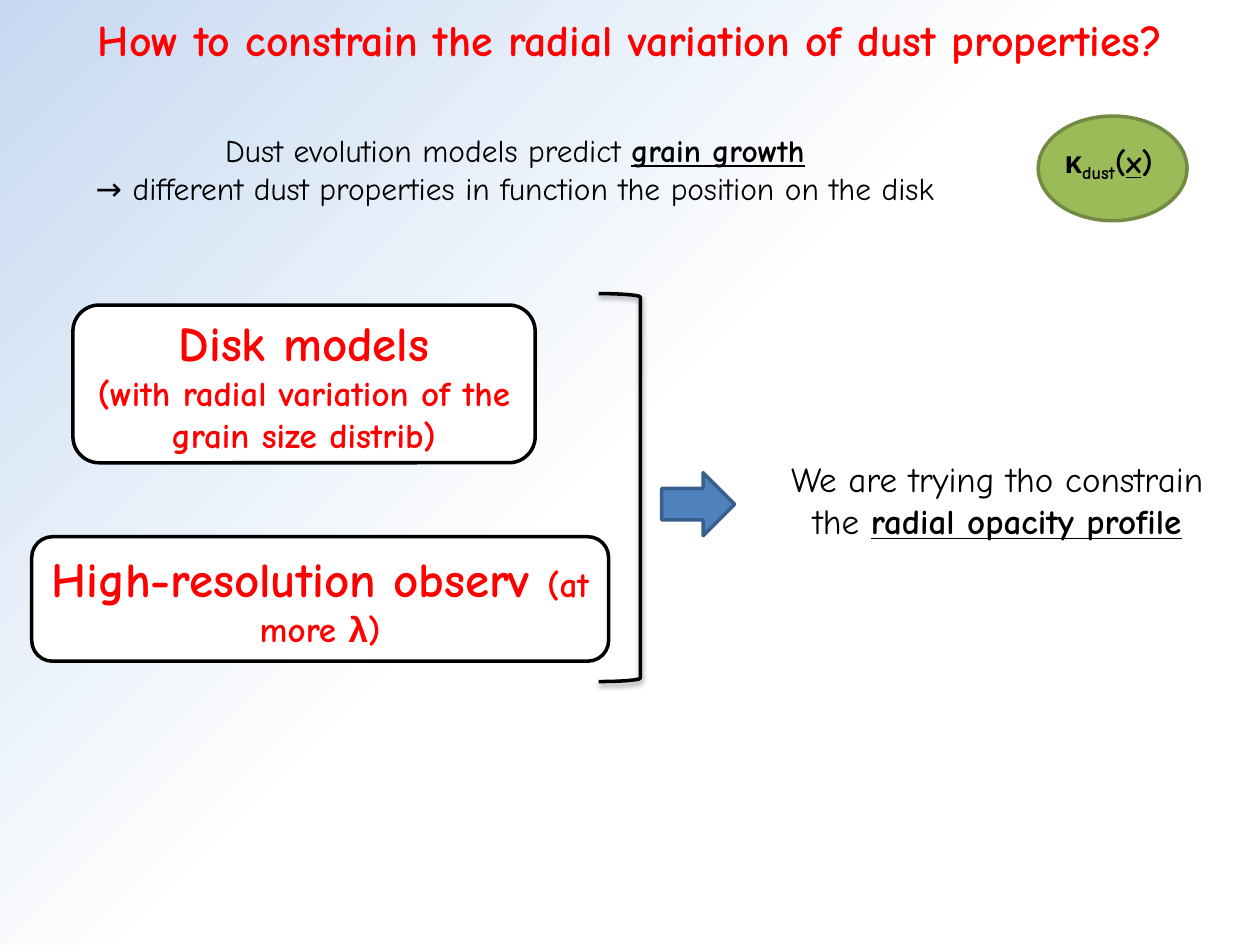
from pptx import Presentation
from pptx.dml.color import RGBColor
from pptx.enum.shapes import MSO_SHAPE
from pptx.enum.text import MSO_ANCHOR, MSO_AUTO_SIZE, PP_ALIGN
from pptx.oxml import parse_xml
from pptx.oxml.ns import nsdecls
from pptx.util import Cm, Pt

RED = RGBColor(0xFF, 0x00, 0x00)
BLACK = RGBColor(0x00, 0x00, 0x00)
WHITE = RGBColor(0xFF, 0xFF, 0xFF)
GREEN = RGBColor(0x9B, 0xBB, 0x59)
DARK_GREEN = RGBColor(0x73, 0x8A, 0x42)
BLUE = RGBColor(0x4F, 0x81, 0xBD)
DARK_BLUE = RGBColor(0x3A, 0x5F, 0x8C)

FONT = "Comic Neue"
GREEK_FONT = "Arial"
BOLD = {"bold": True}
KEY = {"bold": True, "underline": True}
GREEK = {"bold": True, "name": GREEK_FONT}

# Each text is a list of paragraphs; each run is (words, size, font settings).
TITLE = [[("How to constrain the radial variation of dust properties?", 25, BOLD)]]
TITLE_BOX = (0, 0.13, 25.4, 1.32)

# (left, top, width, height) in cm, then the paragraphs
INGREDIENTS = [
    ((1.47, 6.15, 9.32, 3.18), [
        [("Disk models", 28, BOLD)],
        [("(with radial variation of the grain size distrib)", 20, BOLD)],
    ]),
    ((0.64, 10.82, 11.63, 2.51), [
        [("High-resolution observ ", 28, BOLD), ("(at more ", 20, BOLD),
         ("λ", 20, GREEK), (")", 20, BOLD)],
    ]),
]

# box, inset in cm or None for the default, wrap, paragraphs
STATEMENTS = [
    ((0.64, 2.54, 19.48, 1.75), 0.1, True, [
        [("Dust evolution models predict ", 18, {}), ("grain growth", 18, KEY)],
        [("→ different dust properties in function the position on the disk", 18, {})],
    ]),
    ((21.03, 2.74, 2.64, 1.02), None, False, [
        [("κ", 18, GREEK), ("dust", 18, {"bold": True, "baseline": -20}),
         ("(", 18, BOLD), ("x", 18, KEY), (")", 18, BOLD)],
    ]),
    ((15.24, 9.09, 9.73, 1.96), None, True, [
        [("We are trying tho constrain the ", 20, {}),
         ("radial opacity profile", 20, KEY)],
    ]),
]

OPACITY_OVAL = (20.93, 2.34, 3.0, 2.11)
BRACKET = (12.07, 5.92, 0.84, 7.82)
ARROW = (13.34, 9.53, 1.47, 1.27)

BACKGROUND = f"""
<p:bg {nsdecls("p", "a")}><p:bgPr><a:gradFill rotWithShape="1">
  <a:gsLst>
    <a:gs pos="50000"><a:srgbClr val="FFFFFF"/></a:gs>
    <a:gs pos="100000"><a:srgbClr val="C6D9F1"/></a:gs>
    <a:gs pos="100000"><a:srgbClr val="CCFFFF"/></a:gs>
  </a:gsLst>
  <a:path path="circle"><a:fillToRect l="100000" t="100000"/></a:path>
  <a:tileRect r="-100000" b="-100000"/>
</a:gradFill><a:effectLst/></p:bgPr></p:bg>"""

BRACKET_SHADOW = f"""
<a:effectLst {nsdecls("a")}>
  <a:outerShdw blurRad="{Pt(3.1)}" dist="{Pt(1.6)}" dir="5400000" rotWithShape="0">
    <a:srgbClr val="000000"><a:alpha val="38000"/></a:srgbClr>
  </a:outerShdw>
</a:effectLst>"""


def in_cm(box):
    return [Cm(length) for length in box]


def write(frame, paragraphs, color):
    for index, runs in enumerate(paragraphs):
        paragraph = frame.add_paragraph() if index else frame.paragraphs[0]
        paragraph.alignment = PP_ALIGN.CENTER
        for words, size, settings in runs:
            run = paragraph.add_run()
            run.text = words
            font = run.font
            font.size = Pt(size)
            font.name = settings.get("name", FONT)
            font.bold = settings.get("bold", False)
            font.underline = settings.get("underline", False)
            font.color.rgb = color
            if "baseline" in settings:
                run._r.get_or_add_rPr().set("baseline", str(settings["baseline"] * 1000))


def add_outlined(slide, kind, box, fill, line):
    shape = slide.shapes.add_shape(kind, *in_cm(box))
    shape.shadow.inherit = False
    if fill is None:
        shape.fill.background()
    else:
        shape.fill.solid()
        shape.fill.fore_color.rgb = fill
    shape.line.color.rgb = line
    shape.line.width = Pt(2)
    return shape


def add_title(slide):
    title = slide.shapes.title
    title.left, title.top, title.width, title.height = in_cm(TITLE_BOX)
    frame = title.text_frame
    frame.vertical_anchor = MSO_ANCHOR.TOP
    frame.auto_size = MSO_AUTO_SIZE.SHAPE_TO_FIT_TEXT
    write(frame, TITLE, RED)


def add_statement(slide, box, inset, wrap, paragraphs):
    frame = slide.shapes.add_textbox(*in_cm(box)).text_frame
    frame.word_wrap = wrap
    frame.auto_size = MSO_AUTO_SIZE.SHAPE_TO_FIT_TEXT
    if inset is not None:
        frame.margin_left = frame.margin_right = Cm(inset)
        frame.margin_top = frame.margin_bottom = Cm(inset)
    write(frame, paragraphs, BLACK)


def main():
    deck = Presentation()
    deck.slide_width, deck.slide_height = Cm(25.4), Cm(19.05)
    slide = deck.slides.add_slide(deck.slide_layouts[5])
    slide.element.cSld.insert(0, parse_xml(BACKGROUND))

    add_title(slide)
    for box, paragraphs in INGREDIENTS:
        card = add_outlined(slide, MSO_SHAPE.ROUNDED_RECTANGLE, box, WHITE, BLACK)
        card.text_frame.vertical_anchor = MSO_ANCHOR.MIDDLE
        write(card.text_frame, paragraphs, RED)

    add_outlined(slide, MSO_SHAPE.OVAL, OPACITY_OVAL, GREEN, DARK_GREEN)
    for statement in STATEMENTS:
        add_statement(slide, *statement)

    bracket = add_outlined(slide, MSO_SHAPE.RIGHT_BRACKET, BRACKET, None, BLACK)
    properties = bracket.element.spPr
    properties.replace(properties.effectLst, parse_xml(BRACKET_SHADOW))
    add_outlined(slide, MSO_SHAPE.RIGHT_ARROW, ARROW, BLUE, DARK_BLUE)

    deck.save("out.pptx")


if __name__ == "__main__":
    main()
